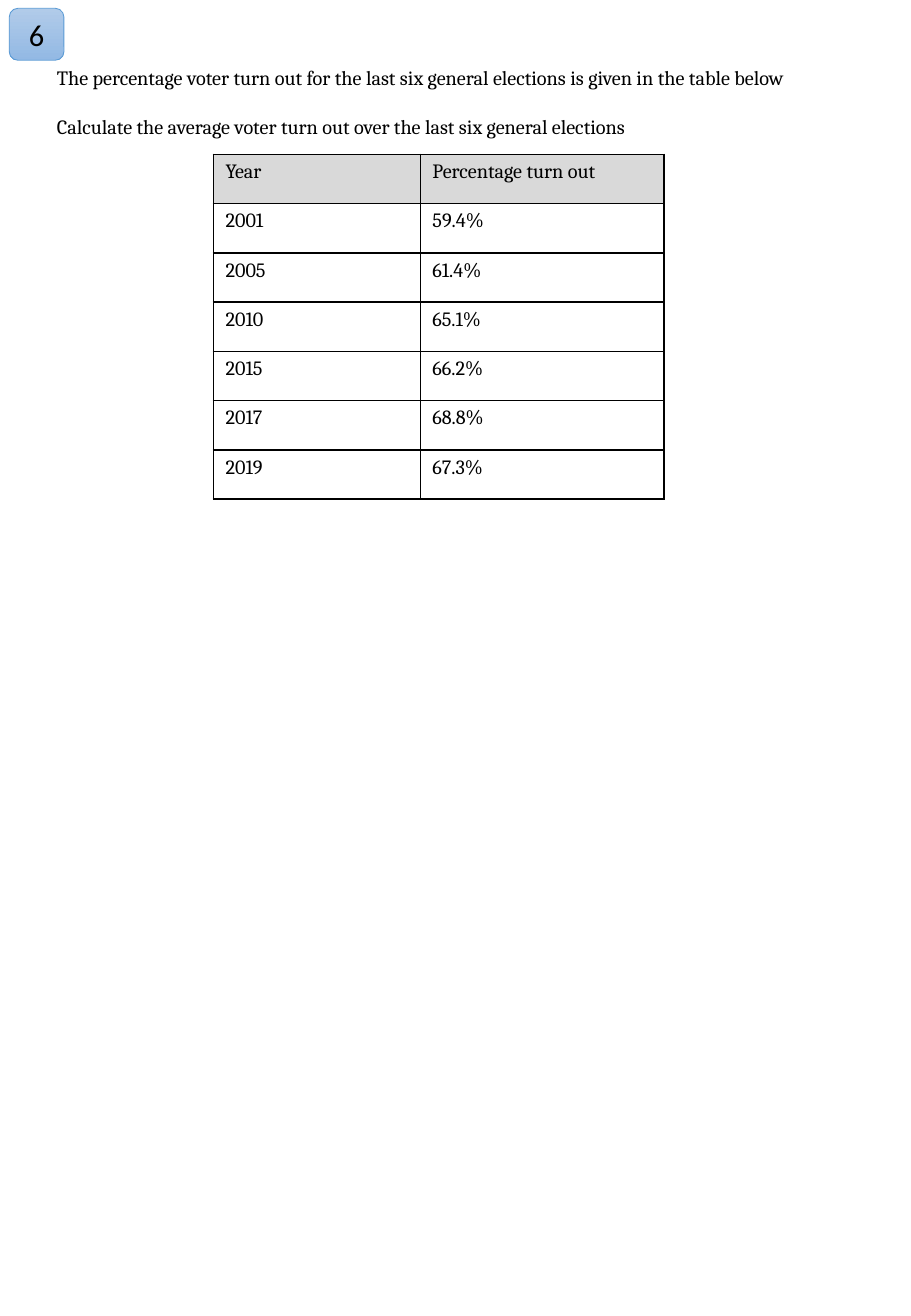
from pptx import Presentation
from pptx.dml.color import RGBColor
from pptx.enum.shapes import MSO_SHAPE as Shape
from pptx.enum.text import MSO_ANCHOR as Anchor, PP_ALIGN as Align
from pptx.oxml import parse_xml
from pptx.oxml.ns import nsdecls
from pptx.util import Pt

QUESTION = [
    "The percentage voter turn out for the last six general elections is given in the table below",
    "Calculate the average voter turn out over the last six general elections",
]
TURNOUT = [
    ("Year", "Percentage turn out"),
    ("2001", "59.4%"),
    ("2005", "61.4%"),
    ("2010", "65.1%"),
    ("2015", "66.2%"),
    ("2017", "68.8%"),
    ("2019", "67.3%"),
]


def color(value):
    """Turn a hex string into a colour."""
    return RGBColor.from_string(value)


def write(para, text, font="Cambria", size=12, align=Align.LEFT, before=0):
    """Put formatted text into a paragraph."""
    para.alignment = align
    para.space_before = Pt(before)
    span = para.add_run()
    span.text = text
    span.font.name = font
    span.font.size = Pt(size)
    span.font.bold = False
    span.font.color.rgb = color("000000")


def add_question(page, lines, left, top, width, height, gap):
    """Add the question as spaced paragraphs."""
    frame = page.shapes.add_textbox(Pt(left), Pt(top), Pt(width), Pt(height)).text_frame
    frame.word_wrap = True
    for index, line in enumerate(lines):
        para = frame.add_paragraph() if index else frame.paragraphs[0]
        write(para, line, before=gap if index else 0)


def add_borders(cell, line="000000", width=1):
    """Draw a line on all four sides of a cell."""
    for side in "LRTB":
        cell._tc.get_or_add_tcPr().append(parse_xml(
            f'<a:ln{side} {nsdecls("a")} w="{Pt(width)}"><a:solidFill>'
            f'<a:srgbClr val="{line}"/></a:solidFill></a:ln{side}>'))


def add_grid(page, rows, left, top, widths, row_height):
    """Add a bordered table with a grey heading row."""
    table = page.shapes.add_table(
        len(rows), len(widths), Pt(left), Pt(top),
        Pt(sum(widths)), Pt(row_height * len(rows))).table
    table.first_row = table.horz_banding = False
    for column, width in zip(table.columns, widths):
        column.width = Pt(width)
    for row, values in enumerate(rows):
        table.rows[row].height = Pt(row_height)
        for column, value in enumerate(values):
            cell = table.cell(row, column)
            add_borders(cell)
            if row == 0:
                cell.fill.solid()
                cell.fill.fore_color.rgb = color("D9D9D9")
            else:
                cell.fill.background()
            write(cell.text_frame.paragraphs[0], value)


def add_badge(page, text, left, top, width, height):
    """Add the rounded question number."""
    badge = page.shapes.add_shape(
        Shape.ROUNDED_RECTANGLE, Pt(left), Pt(top), Pt(width), Pt(height))
    badge.shadow.inherit = False
    badge.fill.gradient()
    badge.fill.gradient_angle = 270
    for stop, value in zip(badge.fill.gradient_stops, ("B1CBE9", "93B9E4")):
        stop.color.rgb = color(value)
    badge.line.color.rgb = color("5B9BD5")
    badge.line.width = Pt(0.5)
    badge.text_frame.vertical_anchor = Anchor.MIDDLE
    write(badge.text_frame.paragraphs[0], text, font="Calibri", size=18, align=Align.CENTER)


def main():
    """Build the voter turn out question."""
    deck = Presentation()
    deck.slide_width, deck.slide_height = Pt(540), Pt(779.76)
    page = deck.slides.add_slide(deck.slide_layouts[6])
    add_question(page, QUESTION, 26.64, 35.28, 486.72, 79.92, gap=14.2)
    add_grid(page, TURNOUT, 126.5, 91.4, (122.6, 144.6), 29.2)
    add_badge(page, "6", 5.5, 4.9, 32.4, 30.8)
    deck.save("out.pptx")


if __name__ == "__main__":
    main()
